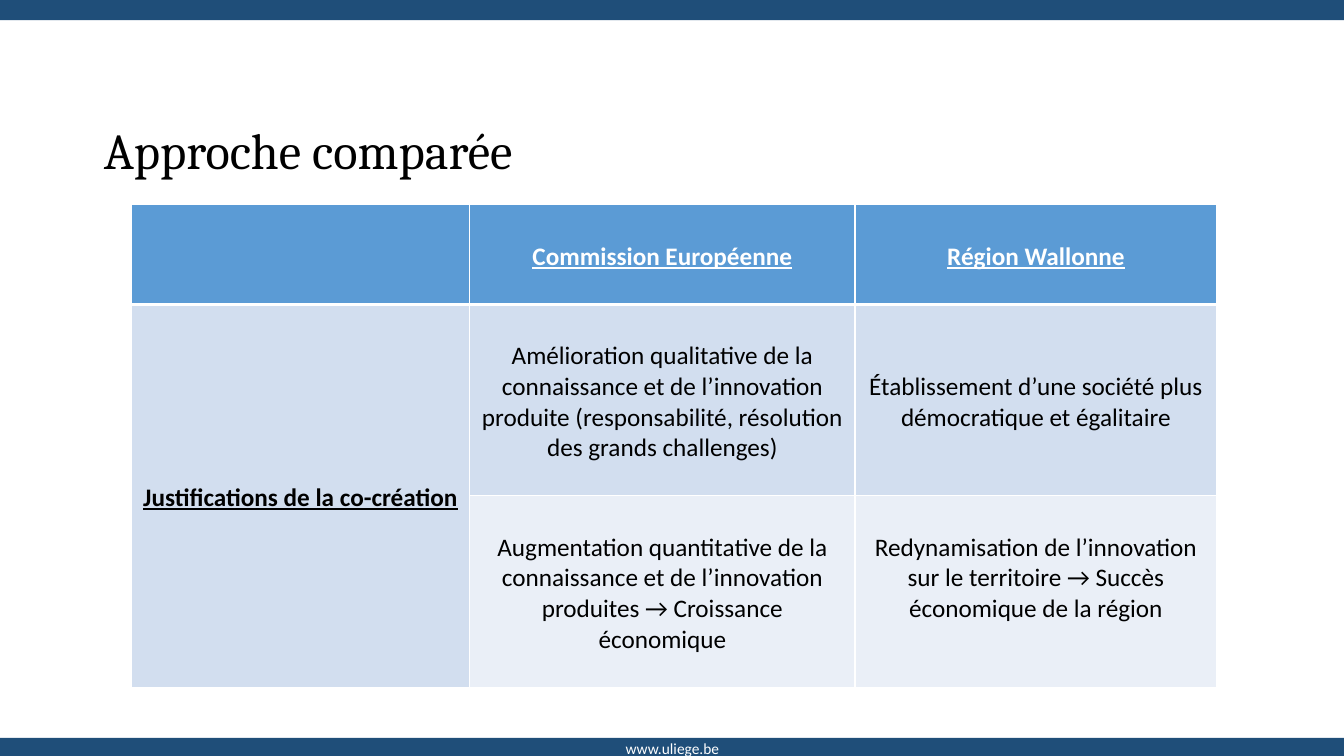
from lxml import etree
from pptx import Presentation
from pptx.dml.color import RGBColor
from pptx.enum.shapes import MSO_SHAPE
from pptx.enum.text import MSO_ANCHOR, PP_ALIGN
from pptx.oxml.ns import qn
from pptx.util import Inches, Pt

RECT = MSO_SHAPE.RECTANGLE
TOP, MIDDLE = MSO_ANCHOR.TOP, MSO_ANCHOR.MIDDLE
LEFT, CENTER = PP_ALIGN.LEFT, PP_ALIGN.CENTER
NAVY, BLUE, PALE, PALER = "1F4E79", "5B9BD5", "D2DEEF", "EAEFF7"
WHITE, BLACK = "FFFFFF", "000000"


def rgb(color):
    return RGBColor.from_string(color)


def write(tf, text, size, color, font="Calibri", align=CENTER, strong=False):
    p = tf.paragraphs[0]
    p.alignment = align
    r = p.add_run()
    r.text = text
    r.font.name, r.font.size = font, Pt(size)
    r.font.color.rgb = rgb(color)
    r.font.bold = r.font.underline = strong
    return p


prs = Presentation()
prs.slide_width, prs.slide_height = Inches(13.33), Inches(7.5)
s = prs.slides.add_slide(prs.slide_layouts[5])

# Bars along the top and bottom edges
for top, height in ((0, 0.2), (7.32, 0.18)):
    bar = s.shapes.add_shape(RECT, 0, Inches(top), prs.slide_width, Inches(height))
    bar.shadow.inherit = False
    bar.fill.solid()
    bar.fill.fore_color.rgb = rgb(NAVY)
    bar.line.fill.background()

# Web address in the bottom bar
address = s.shapes.add_textbox(Inches(4.2), Inches(7.28), Inches(4.94), Inches(0.29))
address.text_frame.word_wrap = True
write(address.text_frame, "www.uliege.be", 11, WHITE)

# Title
title = s.shapes.title
title.left, title.top = Inches(0.93), Inches(0.79)
title.width, title.height = Inches(11.5), Inches(1.45)
title.text_frame.vertical_anchor = MIDDLE
p = write(title.text_frame, "Approche comparée", 36, BLACK, "Cambria", LEFT)
p.line_spacing = 0.9

# Comparison table
rows = [
    ["", "Commission Européenne", "Région Wallonne"],
    ["Justifications de la co-création",
     "Amélioration qualitative de la connaissance et de l’innovation produite "
     "(responsabilité, résolution des grands challenges)",
     "Établissement d’une société plus démocratique et égalitaire"],
    ["",
     "Augmentation quantitative de la connaissance et de l’innovation produites "
     "→ Croissance économique",
     "Redynamisation de l’innovation sur le territoire → Succès économique de la région"],
]
col_widths = [3.36, 3.82, 3.59]
row_heights = [0.99, 1.9, 1.9]
row_fills = [BLUE, PALE, PALER]
table = s.shapes.add_table(3, 3, Inches(1.3), Inches(2.03),
                           Inches(sum(col_widths)), Inches(sum(row_heights))).table
for column, width in zip(table.columns, col_widths):
    column.width = Inches(width)
for row, height in zip(table.rows, row_heights):
    row.height = Inches(height)
table.cell(1, 0).merge(table.cell(2, 0))

for i, texts in enumerate(rows):
    for j, text in enumerate(texts):
        cell = table.cell(i, j)
        cell.fill.solid()
        cell.fill.fore_color.rgb = rgb(row_fills[i])
        cell.vertical_anchor = MIDDLE
        cell.margin_top = Inches(0.09)
        if text:
            write(cell.text_frame, text, 18, WHITE if i == 0 else BLACK,
                  strong=i == 0 or j == 0)

        # White rules, thicker around the foot of the header
        weights = {"lnL": 1, "lnR": 1, "lnT": 3 if i == 1 else 1, "lnB": 3 if i == 0 else 1}
        tcPr = cell._tc.get_or_add_tcPr()
        for k, (side, weight) in enumerate(weights.items()):
            ln = etree.Element(qn("a:" + side), w=str(Pt(weight)))
            fill = etree.SubElement(ln, qn("a:solidFill"))
            etree.SubElement(fill, qn("a:srgbClr"), val=WHITE)
            tcPr.insert(k, ln)

# The last cell starts level with its neighbour
last = table.cell(2, 2)
last.vertical_anchor = TOP
last.margin_top = Inches(0.36)

prs.save("out.pptx")
